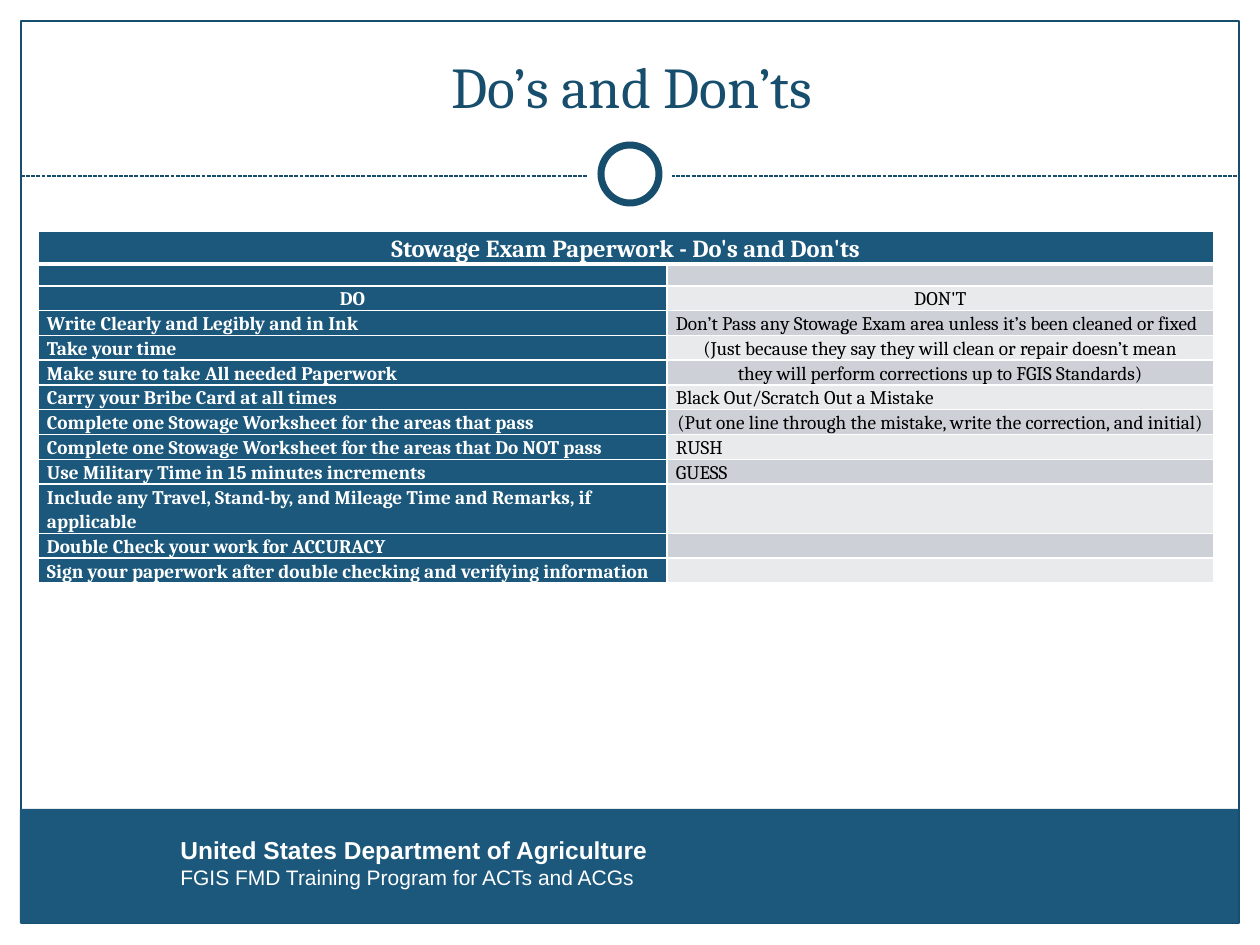
"""Build the stowage exam paperwork slide of do's and don'ts."""
import pptx
import pptx.dml.color
import pptx.enum.dml
import pptx.enum.shapes
import pptx.enum.text
import pptx.oxml
import pptx.oxml.ns
import pptx.util

PX = 914400 / 126
BLUE, NAVY, WHITE, BLACK = "1B587C", "184E6D", "FFFFFF", "000000"
BANDS = ["CDD1D7", "E8EAEC"]
SHAPES = pptx.enum.shapes.MSO_SHAPE
ALIGN = pptx.enum.text.PP_ALIGN
ANCHOR = pptx.enum.text.MSO_ANCHOR


def paint(color_format, hex_color):
    color_format.rgb = pptx.dml.color.RGBColor.from_string(hex_color)


def write(paragraph, text, size=11, color=WHITE, font="Cambria", bold=False,
          align=ALIGN.LEFT, spacing=1.0):
    paragraph.alignment = align
    paragraph.line_spacing = spacing
    paragraph.text = text
    paragraph.font.size = pptx.util.Pt(size)
    paragraph.font.name = font
    paragraph.font.bold = bold
    paint(paragraph.font.color, color)


deck = pptx.Presentation()
deck.slide_width = round(1260 * PX)
deck.slide_height = round(945 * PX)
slide = deck.slides.add_slide(deck.slide_layouts[5])

rule = slide.shapes.add_connector(
    pptx.enum.shapes.MSO_CONNECTOR.STRAIGHT,
    *[round(n * PX) for n in (21, 176, 1239, 176)])
rule.line.width = pptx.util.Pt(0.75)
rule.line.dash_style = pptx.enum.dml.MSO_LINE.SQUARE_DOT
paint(rule.line.color, NAVY)
pptx.oxml.ns.qn("a:effectLst")
rule._element.spPr.append(pptx.oxml.parse_xml(
    f'<a:effectLst {pptx.oxml.ns.nsdecls("a")}/>'))

for kind, box, fill, line_width in [
    (SHAPES.RECTANGLE, (21, 21, 1218, 902), None, 0.75),
    (SHAPES.OVAL, (588, 132, 84, 84), WHITE, 0),
    (SHAPES.OVAL, (601, 145, 58, 58), WHITE, 4),
    (SHAPES.RECTANGLE, (20, 809, 1218, 114), BLUE, 0),
]:
    decoration = slide.shapes.add_shape(kind, *[round(n * PX) for n in box])
    decoration.shadow.inherit = False
    if fill:
        decoration.fill.solid()
        paint(decoration.fill.fore_color, fill)
    else:
        decoration.fill.background()
    if line_width:
        decoration.line.width = pptx.util.Pt(line_width)
        paint(decoration.line.color, NAVY)
    else:
        decoration.line.fill.background()

heading = slide.shapes.title
heading.left, heading.top, heading.width, heading.height = [
    round(n * PX) for n in (44, 21, 1176, 105)]
heading.text_frame.vertical_anchor = ANCHOR.BOTTOM
write(heading.text_frame.paragraphs[0], "Do’s and Don’ts", size=33, color=NAVY,
      align=ALIGN.CENTER)

agency = slide.shapes.add_textbox(
    *[round(n * PX) for n in (168, 829, 1081, 68)]).text_frame
agency.word_wrap = True
write(agency.paragraphs[0], "United States Department of Agriculture",
      size=14, font="Arial", bold=True)
write(agency.add_paragraph(), "FGIS FMD Training Program for ACTs and ACGs",
      size=12, font="Arial")

advice = [
    ("Stowage Exam Paperwork - Do's and Don'ts", ""),
    ("", ""),
    ("DO", "DON'T"),
    ("Write Clearly and Legibly and in Ink",
     "Don’t Pass any Stowage Exam area unless it’s been cleaned or fixed"),
    ("Take your time",
     "(Just because they say they will clean or repair doesn’t mean"),
    ("Make sure to take All needed Paperwork",
     "they will perform corrections up to FGIS Standards)"),
    ("Carry your Bribe Card at all times", "Black Out/Scratch Out a Mistake"),
    ("Complete one Stowage Worksheet for the areas that pass",
     "(Put one line through the mistake, write the correction, and initial)"),
    ("Complete one Stowage Worksheet for the areas that Do NOT pass", "RUSH"),
    ("Use Military Time in 15 minutes increments", "GUESS"),
    ("Include any Travel, Stand-by, and Mileage Time and Remarks, if applicable", ""),
    ("Double Check your work for ACCURACY", ""),
    ("Sign your paperwork after double checking and verifying information", ""),
]
centered = {(0, 0), (2, 0), (2, 1), (4, 1), (5, 1), (7, 1)}
heights = [33, 22] + [24] * 8 + [48] + [24] * 2

paperwork = slide.shapes.add_table(
    len(advice), 2,
    *[round(n * PX) for n in (38, 231, 1176, sum(heights))]).table
paperwork.first_row = False
paperwork.horz_banding = False
for column, width in zip(paperwork.columns, (629, 547)):
    column.width = round(width * PX)

for r, (pair, height) in enumerate(zip(advice, heights)):
    paperwork.rows[r].height = round(height * PX)
    for c, text in enumerate(pair):
        cell = paperwork.cell(r, c)
        cell.margin_left = cell.margin_right = round(9 * PX)
        cell.margin_top = cell.margin_bottom = 0
        cell.vertical_anchor = ANCHOR.BOTTOM
        is_do = c == 0 or r == 0
        write(cell.text_frame.paragraphs[0], text,
              size=14 if r == 0 else 11 if text else 9,
              color=WHITE if is_do else BLACK, bold=is_do, spacing=1.07,
              align=ALIGN.CENTER if (r, c) in centered else ALIGN.LEFT)
        for side in "LRTB":
            thick = (r, side) in [(0, "B"), (1, "T")]
            cell._tc.get_or_add_tcPr().append(pptx.oxml.parse_xml(
                f'<a:ln{side} {pptx.oxml.ns.nsdecls("a")} w="{38100 if thick else 12700}">'
                f'<a:solidFill><a:srgbClr val="{WHITE}"/></a:solidFill></a:ln{side}>'))
        cell.fill.solid()
        paint(cell.fill.fore_color, BLUE if is_do else BANDS[(r - 1) % 2])
paperwork.cell(0, 0).merge(paperwork.cell(0, 1))

deck.save("out.pptx")
